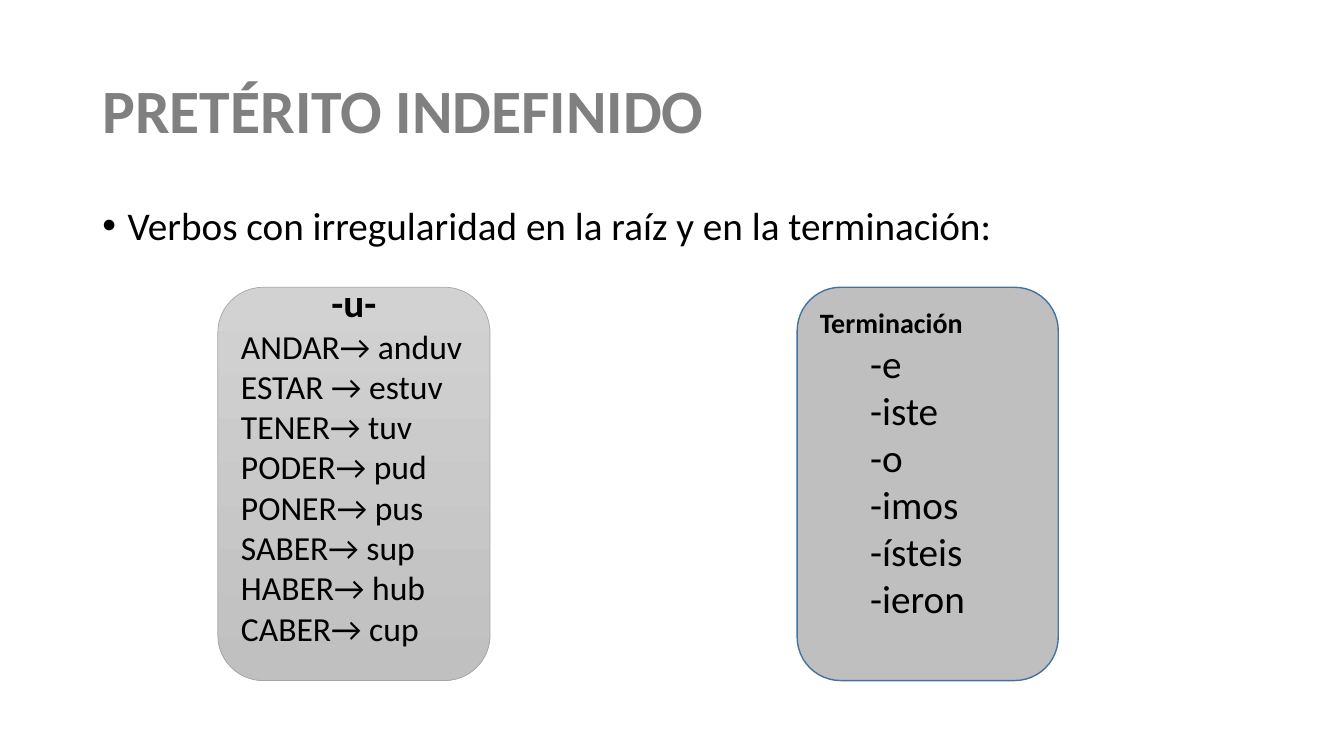
from lxml.etree import SubElement
from pptx import Presentation
from pptx.dml.color import RGBColor
from pptx.enum.shapes import MSO_SHAPE as Shape
from pptx.enum.text import MSO_ANCHOR as Anchor, PP_ALIGN as Align
from pptx.oxml.ns import qn
from pptx.util import Cm, Pt

COLOURS = {
    "title": "808080",
    "text": "000000",
    "root_top": "D2D2D2",
    "root_bottom": "C0C0C0",
    "root_line": "A5A5A5",
    "ending": "BFBFBF",
    "ending_line": "43739E",
}
ROOTS = {
    "ANDAR→": "anduv",
    "ESTAR →": "estuv",
    "TENER→": "tuv",
    "PODER→": "pud",
    "PONER→": "pus",
    "SABER→": "sup",
    "HABER→": "hub",
    "CABER→": "cup",
}
ENDINGS = ["-e", "-iste", "-o", "-imos", "-ísteis", "-ieron"]


def rgb(key):
    return RGBColor.from_string(COLOURS[key])


def write(paragraph, text, size=24, bold=False, colour="text", align=Align.LEFT,
          spacing=1.0, before=0, level=0, indent=0, hanging=0, bullet=None):
    run = paragraph.add_run()
    run.text = text
    run.font.name = "Calibri"
    run.font.size = Pt(size)
    run.font.bold = bold
    run.font.color.rgb = rgb(colour)
    paragraph.alignment = align
    paragraph.line_spacing = spacing
    paragraph.space_before = Pt(before)
    paragraph.level = level
    properties = paragraph._p.get_or_add_pPr()
    properties.set("marL", str(Cm(indent)))
    properties.set("indent", str(Cm(-hanging)))
    if bullet:
        SubElement(properties, qn("a:buFont")).set("typeface", "Arial")
        SubElement(properties, qn("a:buChar")).set("char", bullet)


class VerbSlide:
    def __init__(self, presentation):
        self.slide = presentation.slides.add_slide(presentation.slide_layouts[5])

    def place(self, shape, left, top, width, height):
        shape.left, shape.top = Cm(left), Cm(top)
        shape.width, shape.height = Cm(width), Cm(height)

    def title(self, text, *box):
        heading = self.slide.shapes.title
        self.place(heading, *box)
        heading.text_frame.vertical_anchor = Anchor.MIDDLE
        write(heading.text_frame.paragraphs[0], text, size=44, bold=True,
              colour="title", spacing=0.9)

    def bullet(self, text, *box):
        body = self.slide.shapes.add_textbox(*map(Cm, box)).text_frame
        body.word_wrap = True
        write(body.paragraphs[0], text, size=28, spacing=0.9, before=10,
              indent=0.64, hanging=0.64, bullet="•")

    def card(self, box, fills, line, line_width, heading, heading_format,
             items, item_format):
        card = self.slide.shapes.add_shape(Shape.ROUNDED_RECTANGLE, *map(Cm, box))
        card.shadow.inherit = False
        if len(fills) > 1:
            card.fill.gradient()
            card.fill.gradient_angle = 270
            for stop, fill in zip(card.fill.gradient_stops, fills):
                stop.color.rgb = rgb(fill)
        else:
            card.fill.solid()
            card.fill.fore_color.rgb = rgb(fills[0])
        card.line.color.rgb = rgb(line)
        card.line.width = Pt(line_width)
        frame = card.text_frame
        frame.word_wrap = True
        frame.vertical_anchor = Anchor.MIDDLE
        frame.margin_bottom = Cm(1.17)
        write(frame.paragraphs[0], heading, bold=True, **heading_format)
        for item in items:
            write(frame.add_paragraph(), item, **item_format)


def main():
    presentation = Presentation()
    presentation.slide_width, presentation.slide_height = Cm(33.87), Cm(19.05)
    preterite = VerbSlide(presentation)
    preterite.title("PRETÉRITO INDEFINIDO", 2.33, 1.01, 29.21, 3.68)
    preterite.bullet("Verbos con irregularidad en la raíz y en la terminación:",
                     2.33, 5.07, 29.21, 12.09)
    preterite.card((5.49, 7.24, 6.86, 9.91), ["root_top", "root_bottom"],
                   "root_line", 0.5, "-u-", {"size": 28, "align": Align.CENTER},
                   [f"{verb} {root}" for verb, root in ROOTS.items()], {"size": 24})
    preterite.card((20.09, 7.24, 6.58, 9.91), ["ending"],
                   "ending_line", 1, "Terminación", {"size": 20},
                   ENDINGS, {"size": 28, "level": 1, "indent": 1.27})
    presentation.save("out.pptx")


if __name__ == "__main__":
    main()
